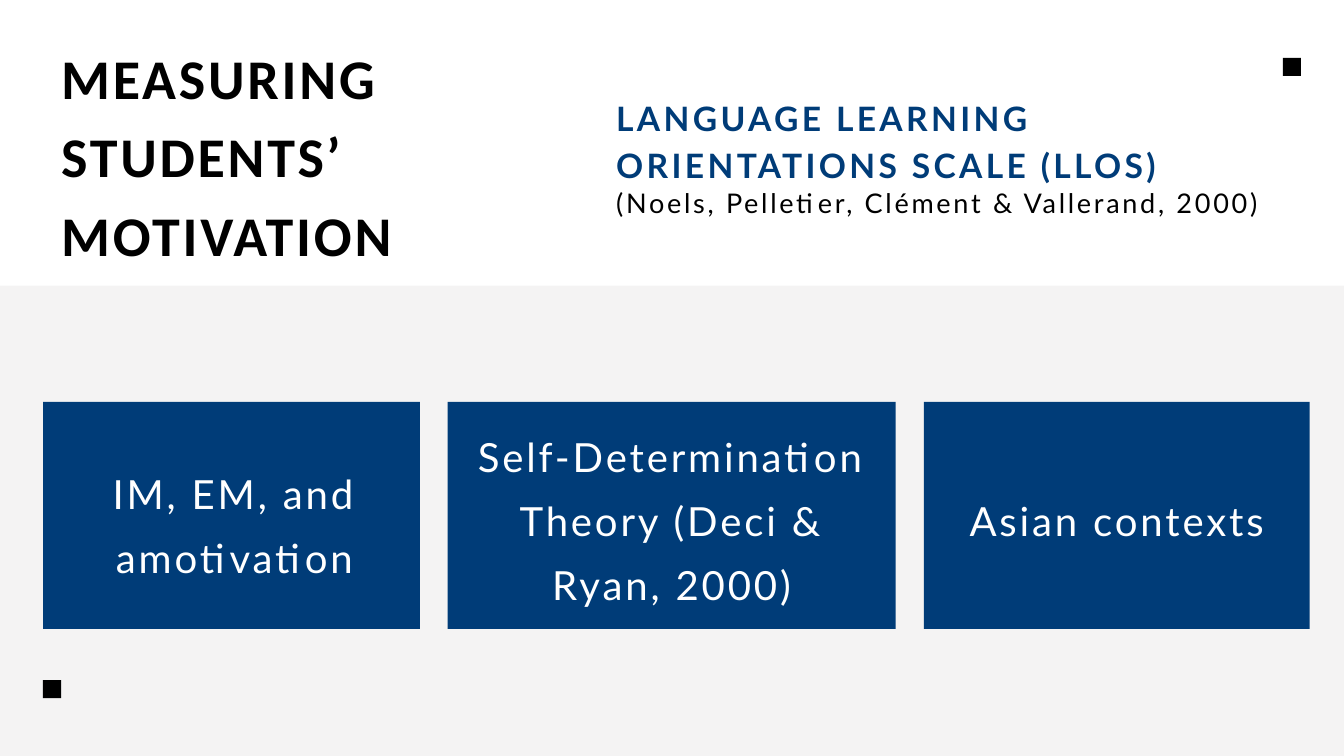
from lxml import etree
from pptx import Presentation
from pptx.dml.color import RGBColor
from pptx.enum.shapes import MSO_SHAPE
from pptx.enum.text import PP_ALIGN
from pptx.oxml.ns import qn
from pptx.util import Inches, Pt

NAVY, BLACK, WHITE = "003C78", "000000", "FFFFFF"

presentation = Presentation()
presentation.slide_width = Inches(20)
presentation.slide_height = Inches(11.25)
slide = presentation.slides.add_slide(presentation.slide_layouts[6])


def add_block(left, top, width, height, color):
    shape = slide.shapes.add_shape(MSO_SHAPE.RECTANGLE, Inches(left), Inches(top),
                                   Inches(width), Inches(height))
    shape.shadow.inherit = False
    shape.fill.solid()
    shape.fill.fore_color.rgb = RGBColor.from_string(color)
    shape.line.fill.background()
    return shape


def add_text(text, left, top, width, height, size, line, tracking, color=BLACK,
             font="Lato", bold=False, align=PP_ALIGN.LEFT):
    box = slide.shapes.add_textbox(Inches(left), Inches(top), Inches(width), Inches(height))
    frame = box.text_frame
    frame.word_wrap = True
    frame.margin_left = frame.margin_right = frame.margin_top = frame.margin_bottom = 0
    frame.text = text
    for paragraph in frame.paragraphs:
        paragraph.alignment = align
        paragraph.line_spacing = Pt(line)
        run = paragraph.runs[0]
        run.font.name = font
        run.font.size = Pt(size)
        run.font.bold = bold
        run.font.color.rgb = RGBColor.from_string(color)
        # Letter spacing in hundredths of a point
        run.font._element.set("spc", str(round(tracking * 100)))


# Grey lower band, slightly transparent
band = add_block(0, 4.25, 20, 7, "F2F1F1")
band_color = band.fill._xPr.find(qn("a:solidFill"))[0]
etree.SubElement(band_color, qn("a:alpha")).set("val", "80000")

# Heading and scale name with its citation
add_text("MEASURING\nSTUDENTS’\nMOTIVATION", 0.91, 0.48, 7.81, 3.51,
         size=60, line=84, tracking=3, font="Calibri", bold=True)
add_text("LANGUAGE LEARNING ORIENTATIONS SCALE (LLOS)", 9.17, 1.36, 9.71, 1.37,
         size=36, line=50.4, tracking=3.6, color=NAVY, bold=True)
add_text("(Noels, Pelletier, Clément & Vallerand, 2000)", 9.17, 2.62, 9.71, 0.6,
         size=29, line=46.4, tracking=2.9)

# Three cards: block left and width, then text left, top, width and height
cards = [
    ("IM, EM, and amotivation", 0.64, 5.61, (1.1, 6.74, 4.78, 1.83)),
    ("Self-Determination Theory (Deci & Ryan, 2000)", 6.66, 6.67, (7.04, 6.19, 5.91, 2.78)),
    ("Asian contexts", 13.75, 5.74, (13.72, 7.14, 5.8, 0.89)),
]
for label, left, width, text_area in cards:
    add_block(left, 5.98, width, 3.38, NAVY)
    add_text(label, *text_area, size=43, line=68.8, tracking=3.1,
             color=WHITE, align=PP_ALIGN.CENTER)

# Small corner squares
for left, top in [(0.64, 10.12), (19.09, 0.86)]:
    add_block(left, top, 0.27, 0.27, BLACK)

presentation.save("out.pptx")
